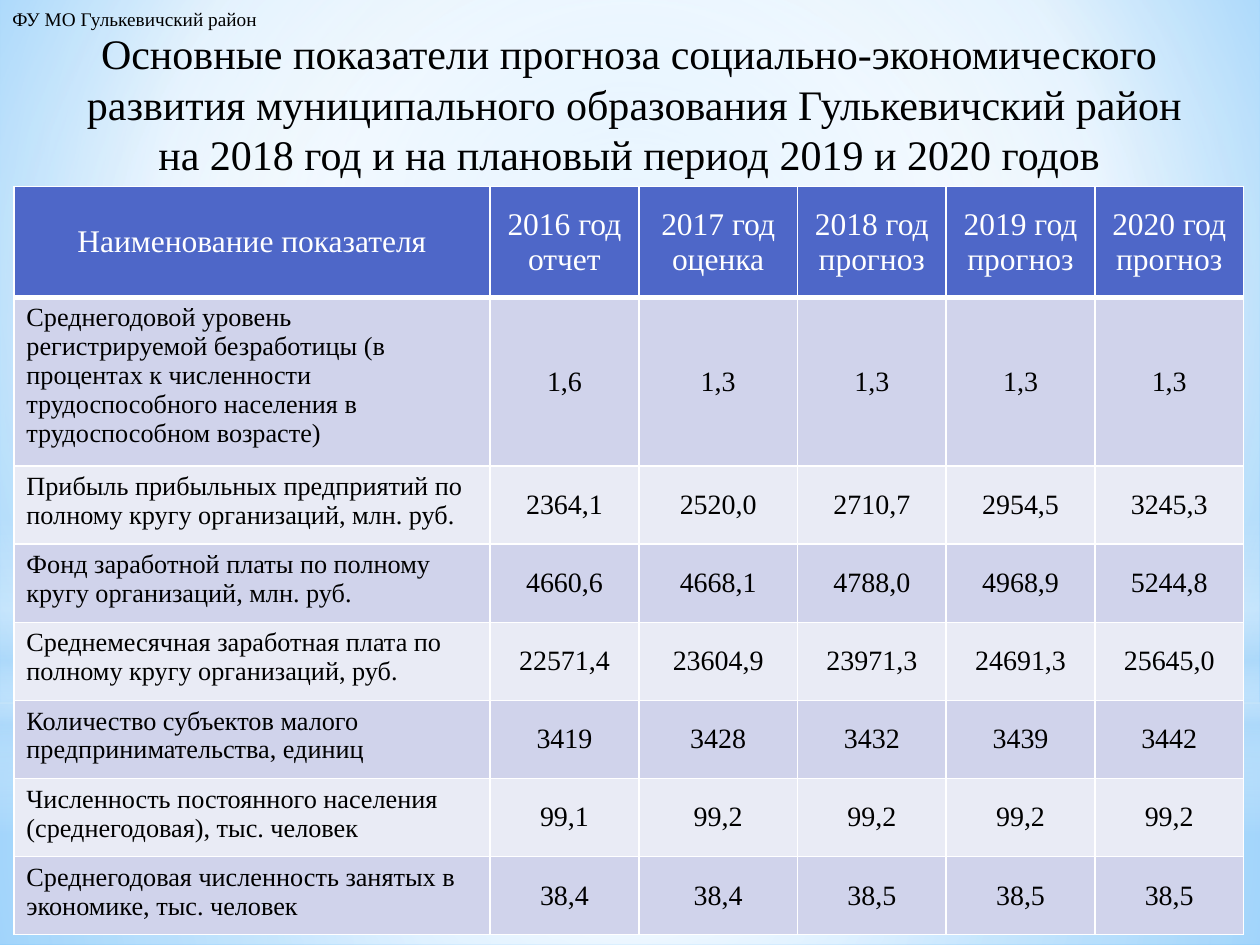
from lxml.etree import SubElement
from pptx import Presentation
from pptx.dml.color import RGBColor
from pptx.enum.shapes import MSO_SHAPE
from pptx.enum.text import MSO_ANCHOR, MSO_AUTO_SIZE, PP_ALIGN
from pptx.oxml.ns import qn
from pptx.util import Inches, Pt

COLORS = {
    "text": "000000", "white": "FFFFFF", "header": "4E67C8",
    "odd": "D0D3EB", "even": "E9EBF5",
    "sky": "9ED5FF", "deep": "5BB9FF", "mist": "B4DCFA",
}
FONT = "Times New Roman"


def set_gradient(parent, stops, focus):
    solid = parent.find(qn("a:solidFill"))
    gradient = SubElement(parent, qn("a:gradFill"), rotWithShape="1")
    parent.replace(solid, gradient)
    stop_list = SubElement(gradient, qn("a:gsLst"))
    for position, color, opacity in stops:
        stop = SubElement(stop_list, qn("a:gs"), pos=str(position * 1000))
        tint = SubElement(stop, qn("a:srgbClr"), val=COLORS[color])
        if opacity < 100:
            SubElement(tint, qn("a:alpha"), val=str(opacity * 1000))
    if focus:
        circle = SubElement(gradient, qn("a:path"), path="circle")
        SubElement(circle, qn("a:fillToRect"),
                   {side: str(value * 1000) for side, value in zip("ltrb", focus)})
    else:
        SubElement(gradient, qn("a:lin"), ang=str(90 * 60000), scaled="0")


def format_text(frame, size, color, align):
    for paragraph in frame.paragraphs:
        paragraph.alignment = align
        for run in paragraph.runs:
            for key, value in {"name": FONT, "size": Pt(size), "bold": False}.items():
                setattr(run.font, key, value)
            run.font.color.rgb = RGBColor.from_string(COLORS[color])


prs = Presentation()
prs.slide_width, prs.slide_height = Inches(10), Inches(7.5)
slide = prs.slides.add_slide(prs.slide_layouts[5])
title = slide.shapes.title

slide.background.fill.solid()
set_gradient(slide.element.find(".//" + qn("p:bgPr")),
             [(0, "sky", 100), (60, "white", 100), (100, "deep", 100)], (20, 10, 20, 60))

center = (50, 50, 50, 50)
glows = [
    (MSO_SHAPE.RECTANGLE, 5.58, 1.92, center,
     [(0, "white", 91), (37, "white", 76), (100, "mist", 79)]),
    (MSO_SHAPE.RECTANGLE, 0, 5.58, center,
     [(0, "white", 89), (48, "white", 62), (100, "mist", 79)]),
    (MSO_SHAPE.RECTANGLE, 4.12, 2.5, None,
     [(0, "white", 0), (29, "white", 30), (45, "mist", 40),
      (55, "white", 26), (65, "mist", 60), (100, "white", 0)]),
    (MSO_SHAPE.OVAL, 1.75, 5.58, center, [(0, "white", 100), (56, "white", 0)]),
]
for kind, top, height, focus, stops in glows:
    glow = slide.shapes.add_shape(kind, 0, Inches(top), Inches(10), Inches(height))
    glow.shadow.inherit = False
    glow.line.fill.background()
    glow.fill.solid()
    set_gradient(glow.element.spPr, stops, focus)
    title.element.addprevious(glow.element)

title.left, title.top = Inches(0.11), Inches(0.17)
title.width, title.height = Inches(9.85), Inches(1.31)
title.text_frame.text = (
    "Основные показатели прогноза социально-экономического \n"
    "развития муниципального образования Гулькевичский район\n"
    "на 2018 год и на плановый период 2019 и 2020 годов "
)
for key, value in {"vertical_anchor": MSO_ANCHOR.TOP, "word_wrap": True,
                   "auto_size": MSO_AUTO_SIZE.NONE}.items():
    setattr(title.text_frame, key, value)
format_text(title.text_frame, 24, "text", PP_ALIGN.CENTER)

rows = [
    ("Наименование показателя", "2016 год отчет", "2017 год оценка",
     "2018 год прогноз", "2019 год прогноз", "2020 год прогноз"),
    ("Среднегодовой уровень регистрируемой безработицы (в процентах к численности "
     "трудоспособного населения в трудоспособном возрасте)",
     "1,6", "1,3", "1,3", "1,3", "1,3"),
    ("Прибыль прибыльных предприятий по полному кругу организаций, млн. руб.",
     "2364,1", "2520,0", "2710,7", "2954,5", "3245,3"),
    ("Фонд заработной платы по полному кругу организаций, млн. руб.",
     "4660,6", "4668,1", "4788,0", "4968,9", "5244,8"),
    ("Среднемесячная заработная плата по полному кругу организаций, руб.",
     "22571,4", "23604,9", "23971,3", "24691,3", "25645,0"),
    ("Количество субъектов малого предпринимательства, единиц",
     "3419", "3428", "3432", "3439", "3442"),
    ("Численность постоянного населения (среднегодовая), тыс. человек",
     "99,1", "99,2", "99,2", "99,2", "99,2"),
    ("Среднегодовая численность занятых в экономике, тыс. человек",
     "38,4", "38,4", "38,5", "38,5", "38,5"),
]
col_widths = [3.78, 1.18, 1.26, 1.18, 1.18, 1.18]
row_heights = [0.88, 1.34] + [0.62] * 6
indicators = slide.shapes.add_table(
    len(rows), len(col_widths), Inches(0.11), Inches(1.48),
    Inches(sum(col_widths)), Inches(sum(row_heights))).table
for column, width in zip(indicators.columns, col_widths):
    column.width = Inches(width)
for row, height in zip(indicators.rows, row_heights):
    row.height = Inches(height)

for r, values in enumerate(rows):
    for c, value in enumerate(values):
        cell = indicators.cell(r, c)
        cell.text = value
        is_label = r > 0 and c == 0
        cell.vertical_anchor = MSO_ANCHOR.TOP if is_label else MSO_ANCHOR.MIDDLE
        format_text(cell.text_frame, 18 if r == 0 else 15 if is_label else 16,
                    "text" if r else "white",
                    PP_ALIGN.LEFT if is_label else PP_ALIGN.CENTER)
        for side in "LRTB":
            thick = (r, side) in [(0, "B"), (1, "T")]
            border = SubElement(cell._tc.get_or_add_tcPr(), qn(f"a:ln{side}"),
                                w=str(Pt(3 if thick else 1)))
            border_fill = SubElement(border, qn("a:solidFill"))
            SubElement(border_fill, qn("a:srgbClr"), val=COLORS["white"])
        cell.fill.solid()
        band = "header" if r == 0 else "odd" if r % 2 else "even"
        cell.fill.fore_color.rgb = RGBColor.from_string(COLORS[band])

department = slide.shapes.add_textbox(0, Inches(0.01), Inches(2.18), Inches(0.29))
department.text_frame.text = "ФУ МО Гулькевичский район"
department.text_frame.word_wrap = False
format_text(department.text_frame, 11, "text", PP_ALIGN.LEFT)

prs.save("out.pptx")
